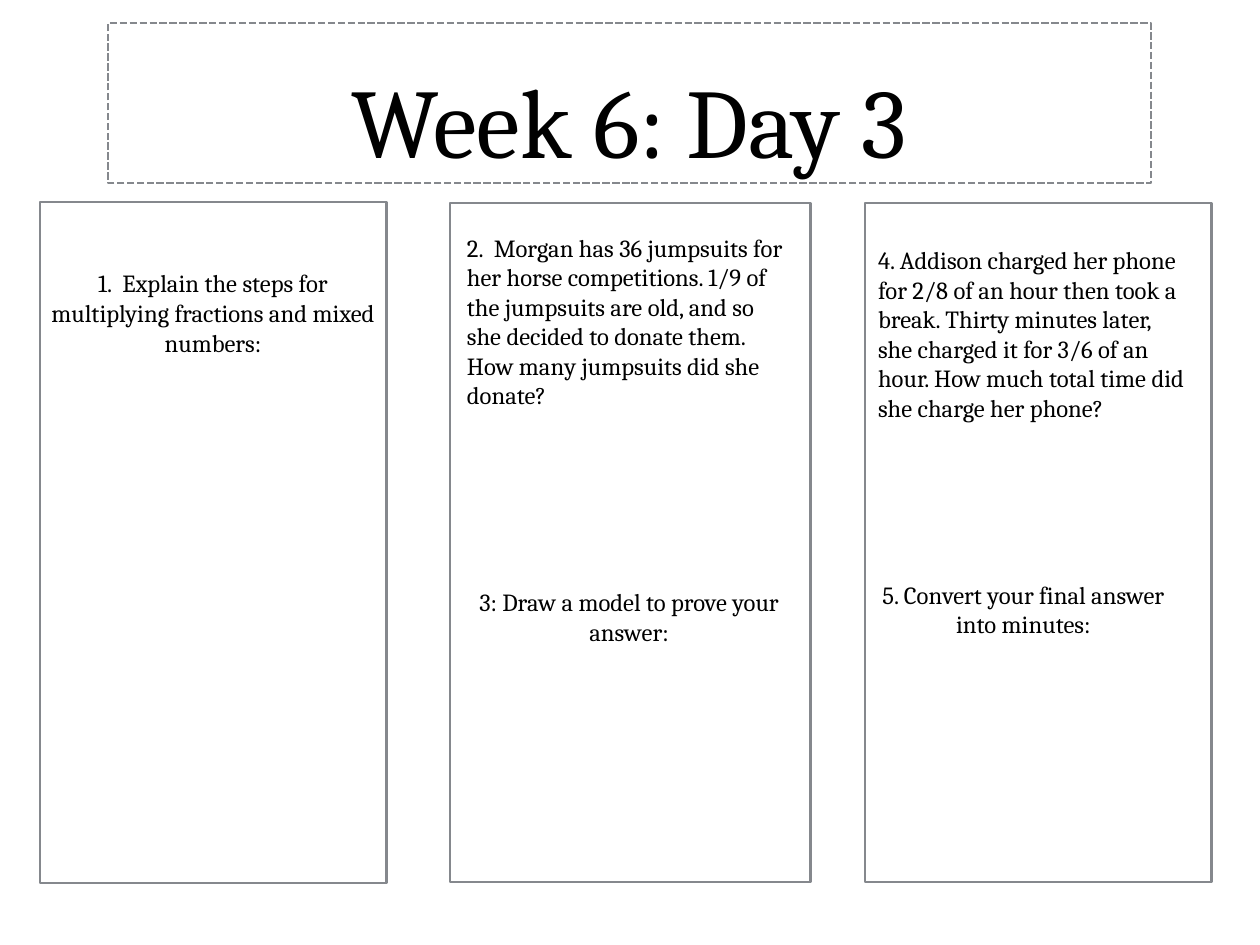
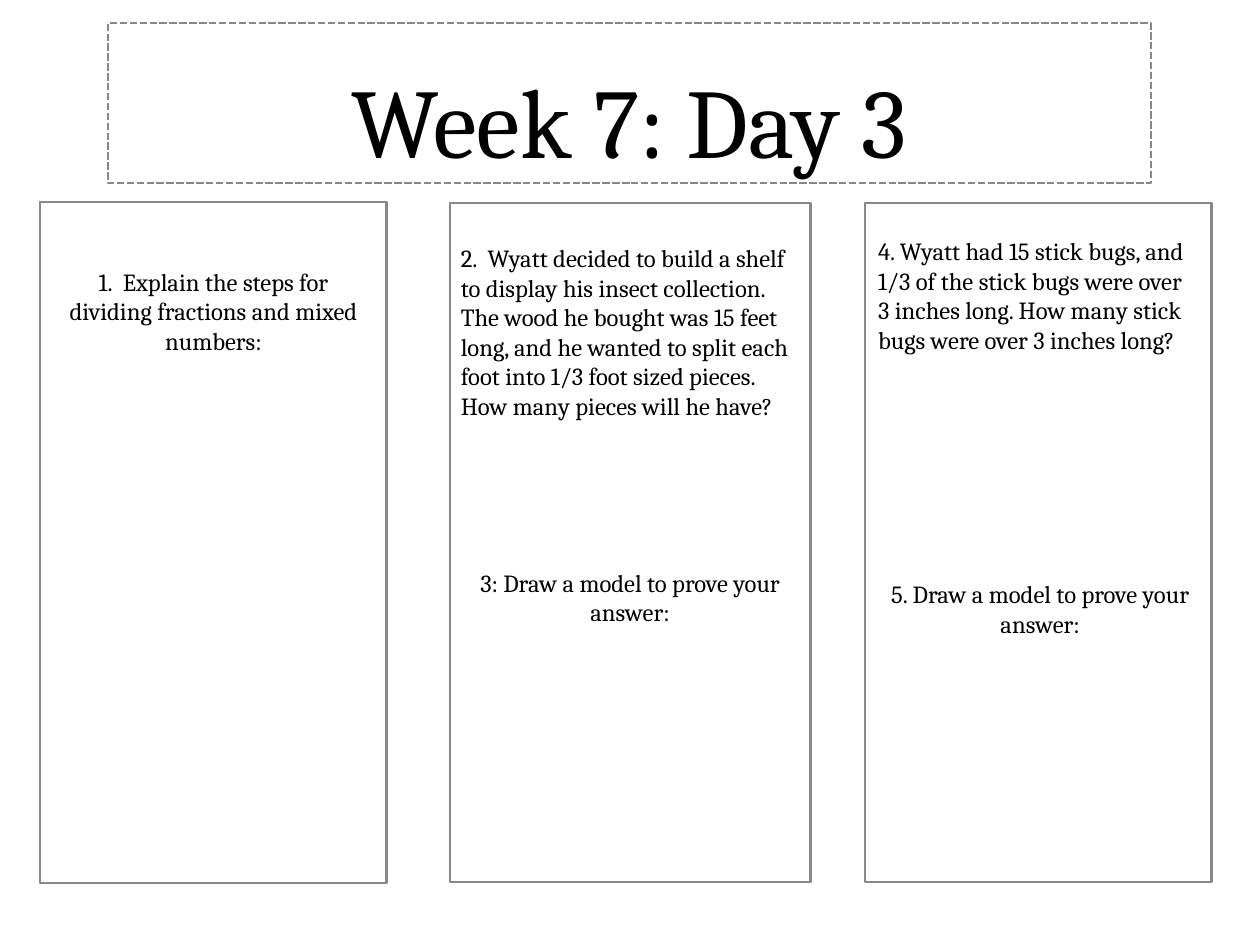
from pptx import Presentation
from pptx.dml.color import RGBColor
from pptx.enum.dml import MSO_LINE
from pptx.enum.shapes import MSO_SHAPE
from pptx.enum.text import MSO_ANCHOR, PP_ALIGN
from pptx.util import Inches, Pt

COLORS = {"text": "000000", "frame": "85888D"}
FONT = "Cambria"
LINE_PITCH = 24
TITLE_BOX = (8.58, 2.44, 82.77, 16.96)
PANELS = [
    (3.16, 21.37, 27.5, 72.07),
    (35.72, 21.46, 28.62, 71.88),
    (68.64, 21.46, 27.5, 71.88),
]
LEFT, CENTER = PP_ALIGN.LEFT, PP_ALIGN.CENTER
MODEL = "Draw a model to prove your answer:"


class Deck:
    def __init__(self, width, height):
        self.prs = Presentation()
        self.prs.slide_width = Inches(width)
        self.prs.slide_height = Inches(height)
        self.s = None

    def add_slide(self):
        self.s = self.prs.slides.add_slide(self.prs.slide_layouts[6])

    def place(self, box):
        sizes = (self.prs.slide_width, self.prs.slide_height) * 2
        return [round(size * share / 100) for size, share in zip(sizes, box)]

    def frame(self, box, dash=None):
        sp = self.s.shapes.add_shape(MSO_SHAPE.RECTANGLE, *self.place(box))
        sp.shadow.inherit = False
        sp.fill.background()
        sp.line.color.rgb = RGBColor.from_string(COLORS["frame"])
        sp.line.width = Pt(2)
        if dash:
            sp.line.dash_style = dash
        return sp

    def fill_text(self, sp, paragraphs, size=20, anchor=MSO_ANCHOR.MIDDLE):
        tf = sp.text_frame
        tf.word_wrap = True
        tf.vertical_anchor = anchor
        tf.margin_left = tf.margin_right = Inches(0.06)
        tf.margin_top = tf.margin_bottom = Inches(0.06)
        tf.text = "\n".join(text for text, _, _ in paragraphs)
        for p, (_, align, blank_lines) in zip(tf.paragraphs, paragraphs):
            p.alignment = align
            if blank_lines:
                p.space_before = Pt(blank_lines * LINE_PITCH)
            for r in p.runs:
                r.font.name = FONT
                r.font.size = Pt(size)
                r.font.color.rgb = RGBColor.from_string(COLORS["text"])

    def title(self, text):
        sp = self.frame(TITLE_BOX, MSO_LINE.SQUARE_DOT)
        self.fill_text(sp, [(text, CENTER, 0)], 80, MSO_ANCHOR.BOTTOM)

    def question(self, box, *paragraphs):
        self.fill_text(self.s.shapes.add_textbox(*self.place(box)), paragraphs)

    def worksheet(self, title, questions):
        self.add_slide()
        self.title(title)
        for panel in PANELS:
            self.frame(panel)
        for box, *paragraphs in questions:
            self.question(box, *paragraphs)


WORKSHEETS = {
    "Week 6: Day 3": [
        ((2.53, 27.84, 28.76, 10.5),
         ("1.  Explain the steps for multiplying fractions and mixed numbers:", CENTER, 0)),
        ((36.64, 25.68, 26.58, 41.61),
         ("2.  Morgan has 36 jumpsuits for her horse competitions. 1/9 of the jumpsuits "
          "are old, and so she decided to donate them. How many jumpsuits did she donate?",
          LEFT, 0),
         (f"3: {MODEL}", CENTER, 6)),
        ((69.27, 25.4, 25.53, 19.78),
         ("4. Addison charged her phone for 2/8 of an hour then took a break. Thirty minutes "
          "later, she charged it for 3/6 of an hour. How much total time did she charge her "
          "phone?", LEFT, 0)),
        ((69.27, 60.82, 23.91, 7.31),
         ("5. Convert your final answer into minutes:", CENTER, 0)),
    ],
    "Week 7: Day 3": [
        ((4.01, 27.65, 25.88, 10.5),
         ("1.  Explain the steps for dividing fractions and mixed numbers:", CENTER, 0)),
        ((36.15, 25.21, 27.71, 41.61),
         ("2.  Wyatt decided to build a shelf to display his insect collection. The wood he "
          "bought was 15 feet long, and he wanted to split each foot into 1/3 foot sized "
          "pieces. How many pieces will he have?", LEFT, 0),
         (f"3: {MODEL}", CENTER, 5)),
        ((69.27, 24.46, 25.53, 13.5),
         ("4. Wyatt had 15 stick bugs, and 1/3 of the stick bugs were over 3 inches long. "
          "How many stick bugs were over 3 inches long?", LEFT, 0)),
        ((69.27, 60.73, 26.58, 7.31), (f"5. {MODEL}", CENTER, 0)),
    ],
}


def main():
    deck = Deck(14.22, 10.67)
    for title, questions in WORKSHEETS.items():
        deck.worksheet(title, questions)
    deck.prs.save("out.pptx")


if __name__ == "__main__":
    main()
